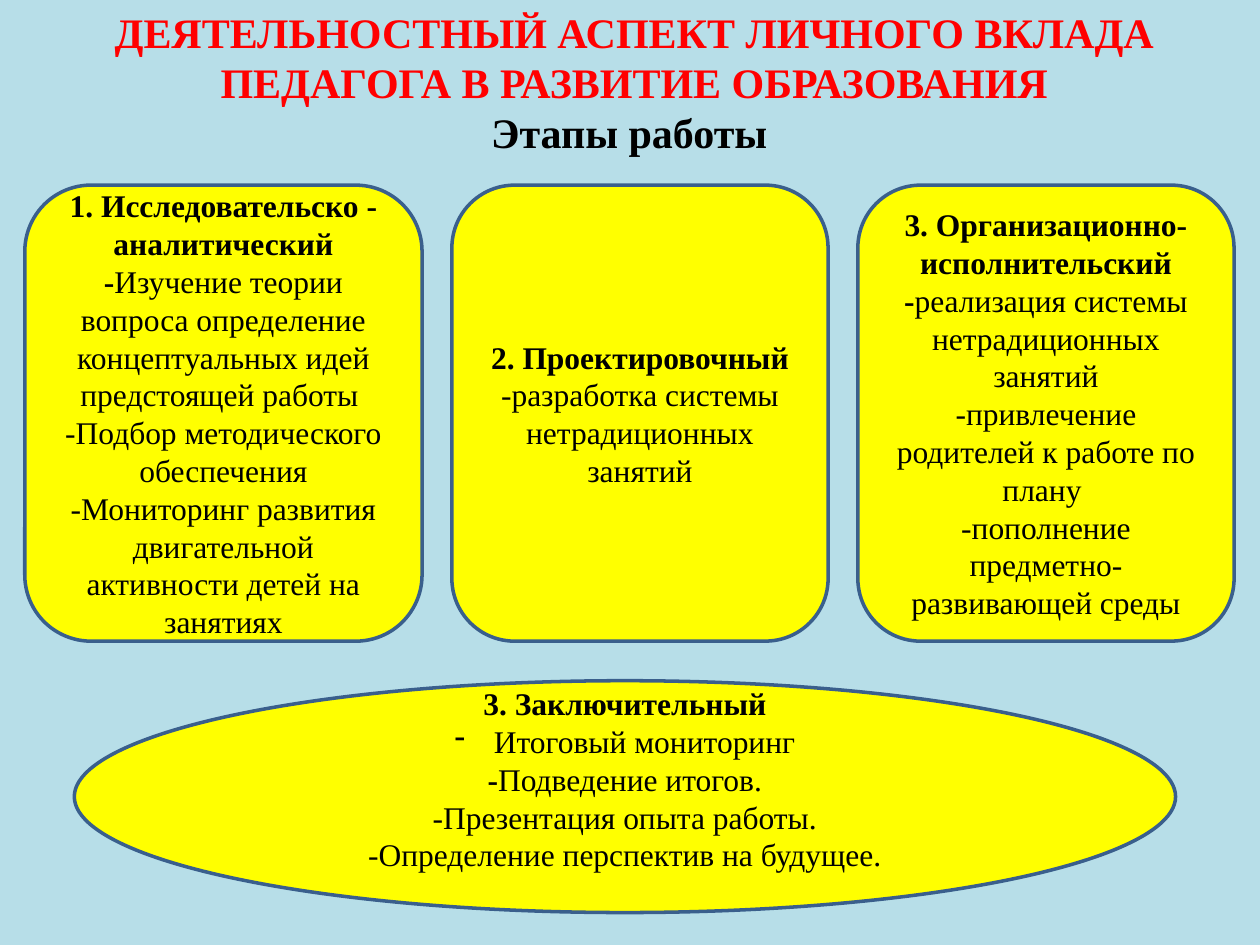
from lxml.etree import SubElement
from pptx import Presentation
from pptx.dml.color import RGBColor
from pptx.enum.shapes import MSO_SHAPE as Shape
from pptx.enum.text import MSO_ANCHOR as Anchor, MSO_AUTO_SIZE as AutoSize, PP_ALIGN as Align
from pptx.oxml.ns import qn
from pptx.util import Pt

FONT = "Times New Roman"
BLACK, RED, YELLOW, BLUE, SKY = "000000", "FF0000", "FFFF00", "3A5F8C", "B7DEE8"

# Each paragraph is a pair: bold part, plain part.
RESEARCH = [
    ("1. Исследовательско - аналитический", ""),
    ("-", "Изучение теории вопроса определение концептуальных идей предстоящей работы "),
    ("", "-Подбор методического обеспечения"),
    ("", "-Мониторинг развития двигательной активности детей на занятиях"),
]
DESIGN = [
    ("2. Проектировочный", ""),
    ("", "-разработка системы нетрадиционных занятий"),
]
DELIVERY = [
    ("3. Организационно- исполнительский", ""),
    ("-", "реализация системы нетрадиционных занятий"),
    ("", "-привлечение родителей к работе по плану "),
    ("", "-пополнение предметно-развивающей среды"),
]
CONCLUSION = [
    ("3. Заключительный", ""),
    ("", "Итоговый мониторинг"),
    ("-", "Подведение итогов."),
    ("", "-Презентация опыта работы."),
    ("", "-Определение перспектив на будущее."),
]


def rgb(value):
    return RGBColor.from_string(value)


def add_span(para, text, size, color, bold):
    span = para.add_run()
    span.text = text
    font = span.font
    font.name, font.size, font.bold = FONT, Pt(size), bold
    font.color.rgb = rgb(color)


def add_para(frame, index):
    para = frame.add_paragraph() if index else frame.paragraphs[0]
    para.alignment = Align.CENTER
    return para


def set_dash_bullet(para, indent):
    props = para._p.get_or_add_pPr()
    props.set("marL", str(Pt(indent)))
    props.set("indent", str(-Pt(indent)))
    SubElement(props, qn("a:buFontTx"))
    SubElement(props, qn("a:buChar"), char="-")


def add_title(page, left, top, width, height):
    box = page.shapes.add_textbox(Pt(left), Pt(top), Pt(width), Pt(height))
    frame = box.text_frame
    frame.word_wrap = True
    frame.auto_size = AutoSize.SHAPE_TO_FIT_TEXT
    lines = [
        ("ДЕЯТЕЛЬНОСТНЫЙ АСПЕКТ ЛИЧНОГО ВКЛАДА ПЕДАГОГА В РАЗВИТИЕ ОБРАЗОВАНИЯ", RED),
        ("Этапы работы ", BLACK),
    ]
    for index, (text, color) in enumerate(lines):
        add_span(add_para(frame, index), text, 24, color, True)


def add_stage(page, kind, left, top, width, height, lines):
    """Add one yellow outlined stage and return its text frame."""
    shape = page.shapes.add_shape(kind, Pt(left), Pt(top), Pt(width), Pt(height))
    shape.shadow.inherit = False
    shape.fill.solid()
    shape.fill.fore_color.rgb = rgb(YELLOW)
    shape.line.color.rgb = rgb(BLUE)
    shape.line.width = Pt(2)
    frame = shape.text_frame
    frame.word_wrap = True
    frame.vertical_anchor = Anchor.MIDDLE
    for index, line in enumerate(lines):
        para = add_para(frame, index)
        for text, bold in zip(line, (True, False)):
            if text:
                add_span(para, text, 18, BLACK, bold)
    return frame


def add_stage_row(page, left, top, height, gap):
    for width, lines in ((227, RESEARCH), (215, DESIGN), (215, DELIVERY)):
        add_stage(page, Shape.ROUNDED_RECTANGLE, left, top, width, height, lines)
        left += width + gap


def add_conclusion(page, left, top, width, height):
    frame = add_stage(page, Shape.OVAL, left, top, width, height, CONCLUSION)
    frame.margin_bottom = Pt(24)
    set_dash_bullet(frame.paragraphs[1], 22.5)


def main():
    deck = Presentation()
    deck.slide_width, deck.slide_height = Pt(720), Pt(540)
    page = deck.slides.add_slide(deck.slide_layouts[6])
    page.background.fill.solid()
    page.background.fill.fore_color.rgb = rgb(SKY)
    add_title(page, 25, 0, 675, 94.5)
    add_stage_row(page, 14.2, 105.8, 260.6, 17)
    add_conclusion(page, 42.5, 389, 629.3, 132.5)
    deck.save("out.pptx")


if __name__ == "__main__":
    main()
